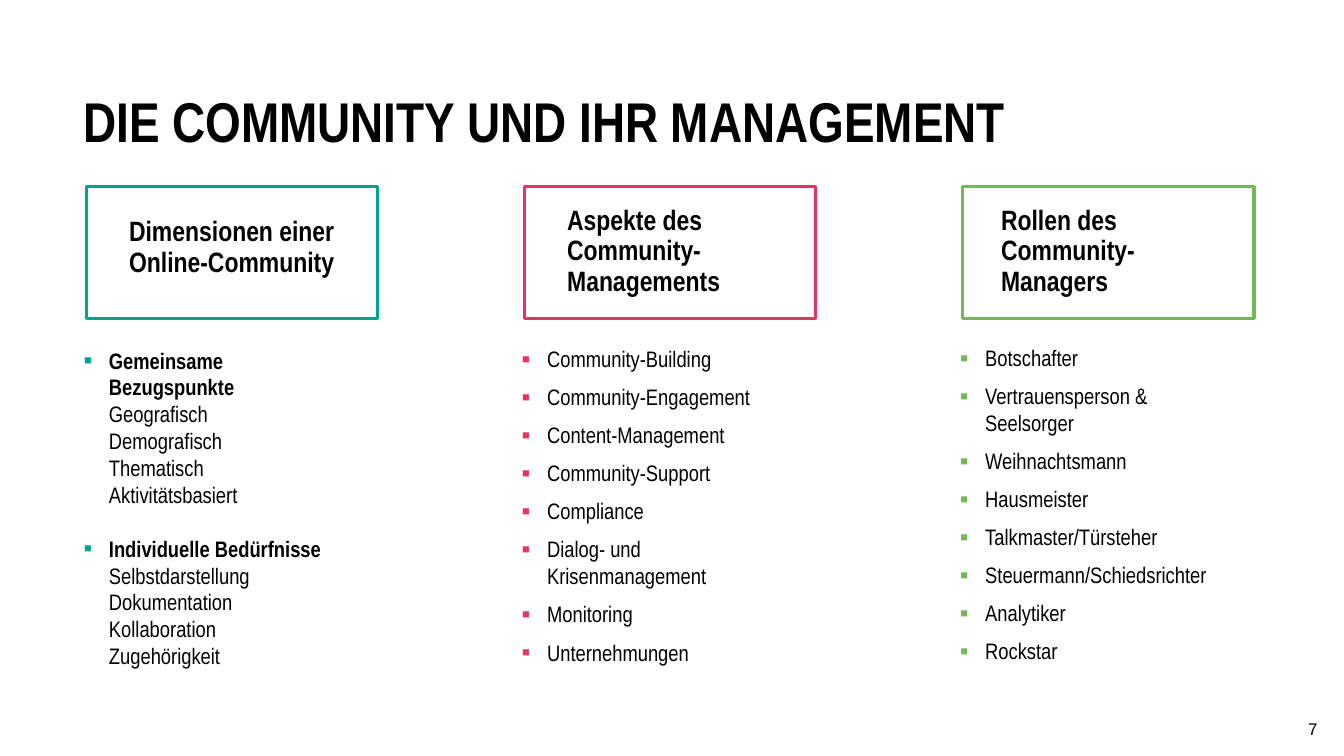
from dataclasses import dataclass

from lxml import etree
from pptx import Presentation
from pptx.dml.color import RGBColor
from pptx.enum import shapes, text
from pptx.oxml.ns import qn
from pptx.slide import Slide
from pptx.text.text import TextFrame, _Paragraph
from pptx.util import Cm, Pt


@dataclass(frozen=True)
class Theme:
    ink: str = "000000"
    teal: str = "00A48F"
    pink: str = "E63264"
    green: str = "73B95A"
    font: str = "Arial Narrow"
    number_font: str = "Arial"
    title_size: float = 30
    heading_size: float = 15
    list_size: float = 12
    number_size: float = 9
    frame_line: float = 1.75


@dataclass(frozen=True)
class Box:
    left: float
    top: float
    width: float
    height: float


@dataclass(frozen=True)
class Entry:
    lead: str
    details: tuple[str, ...] = ()


@dataclass(frozen=True)
class Column:
    heading: str
    color: str
    heading_box: Box
    list_top: float
    list_height: float
    gap_after: float
    entries: tuple[Entry, ...]


THEME = Theme()
COLUMN_PITCH = 8.28
FRAME = Box(1.63, 3.53, 5.51, 2.49)
LIST_LEFT, LIST_WIDTH = 1.3, 5.44
INDENT, HANGING = 0.51, -0.48

COLUMNS = (
    Column("Dimensionen einer Online-Community", THEME.teal,
           Box(1.68, 3.99, 5.44, 1.52), 6.43, 7.21, 14.4, (
               Entry("Gemeinsame Bezugspunkte",
                     ("Geografisch", "Demografisch", "Thematisch", "Aktivitätsbasiert")),
               Entry("Individuelle Bedürfnisse",
                     ("Selbstdarstellung", "Dokumentation", "Kollaboration", "Zugehörigkeit")),
           )),
    Column("Aspekte des Community-Managements", THEME.pink,
           Box(9.96, 3.78, 5.44, 1.93), 6.4, 6.22, 6, tuple(map(Entry, (
               "Community-Building", "Community-Engagement", "Content-Management",
               "Community-Support", "Compliance", "Dialog- und Krisenmanagement",
               "Monitoring", "Unternehmungen")))),
    Column("Rollen des Community-Managers", THEME.green,
           Box(18.16, 3.78, 5.56, 2.08), 6.38, 6.22, 6, tuple(map(Entry, (
               "Botschafter", "Vertrauensperson & Seelsorger", "Weihnachtsmann",
               "Hausmeister", "Talkmaster/Türsteher", "Steuermann/Schiedsrichter",
               "Analytiker", "Rockstar")))),
)


def in_cm(box: Box) -> tuple[Cm, Cm, Cm, Cm]:
    return Cm(box.left), Cm(box.top), Cm(box.width), Cm(box.height)


def style(paragraph: _Paragraph, size: float, bold: bool | None = False,
          font: str = THEME.font) -> None:
    paragraph.font.name = font
    paragraph.font.size = Pt(size)
    paragraph.font.bold = bold
    paragraph.font.color.rgb = RGBColor.from_string(THEME.ink)


def indent(paragraph: _Paragraph, first_line: float = 0) -> None:
    properties = paragraph._p.get_or_add_pPr()
    properties.set("marL", str(Cm(INDENT)))
    properties.set("indent", str(Cm(first_line)))


def add_bullet(paragraph: _Paragraph, color: str) -> None:
    properties = paragraph._p.get_or_add_pPr()
    bullet_color = etree.SubElement(properties, qn("a:buClr"))
    etree.SubElement(bullet_color, qn("a:srgbClr"), val=color)
    etree.SubElement(properties, qn("a:buSzPct"), val="110000")
    etree.SubElement(properties, qn("a:buFont"), typeface=THEME.number_font)
    etree.SubElement(properties, qn("a:buChar"), char="▪")


def add_text_frame(slide: Slide, box: Box) -> TextFrame:
    frame = slide.shapes.add_textbox(*in_cm(box)).text_frame
    frame.word_wrap = True
    return frame


def set_title(slide: Slide, wording: str) -> None:
    title = slide.shapes.title
    title.left, title.top, title.width, title.height = in_cm(Box(1.32, 1.42, 19.96, 1.5))
    title.text_frame.text = wording
    title.text_frame.auto_size = text.MSO_AUTO_SIZE.NONE
    title.text_frame.vertical_anchor = text.MSO_ANCHOR.TOP
    line = title.text_frame.paragraphs[0]
    line.alignment = text.PP_ALIGN.LEFT
    line.line_spacing = Pt(38.4)
    style(line, THEME.title_size, bold=True)


def add_heading(slide: Slide, column: Column, offset: float) -> None:
    outline = slide.shapes.add_shape(
        shapes.MSO_SHAPE.RECTANGLE,
        *in_cm(Box(FRAME.left + offset, FRAME.top, FRAME.width, FRAME.height)))
    outline.shadow.inherit = False
    outline.fill.background()
    outline.line.color.rgb = RGBColor.from_string(column.color)
    outline.line.width = Pt(THEME.frame_line)

    heading = add_text_frame(slide, column.heading_box).paragraphs[0]
    heading.text = column.heading
    heading.line_spacing = 0.9
    indent(heading)
    style(heading, THEME.heading_size, bold=True)


def add_list(slide: Slide, column: Column, offset: float) -> None:
    """Write the bulleted entries; an entry with details gets a bold lead line."""
    frame = add_text_frame(
        slide, Box(LIST_LEFT + offset, column.list_top, LIST_WIDTH, column.list_height))
    for position, entry in enumerate(column.entries):
        item = frame.add_paragraph() if position else frame.paragraphs[0]
        item.space_after = Pt(column.gap_after)
        indent(item, HANGING)
        add_bullet(item, column.color)
        style(item, THEME.list_size)
        lead = item.add_run()
        lead.text = entry.lead
        if entry.details:
            lead.font.bold = True
        for detail in entry.details:
            item.add_line_break()
            item.add_run().text = detail


def add_page_number(slide: Slide, number: str) -> None:
    frame = add_text_frame(slide, Box(23.65, 13.39, 1.5, 0.76))
    frame.vertical_anchor = text.MSO_ANCHOR.MIDDLE
    page = frame.paragraphs[0]
    page.text = number
    page.alignment = text.PP_ALIGN.RIGHT
    style(page, THEME.number_size, font=THEME.number_font)


def main() -> None:
    presentation = Presentation()
    presentation.slide_width, presentation.slide_height = Cm(25.4), Cm(14.29)
    slide = presentation.slides.add_slide(presentation.slide_layouts[5])
    set_title(slide, "DIE COMMUNITY UND IHR MANAGEMENT")
    for position, column in enumerate(COLUMNS):
        offset = position * COLUMN_PITCH
        add_heading(slide, column, offset)
        add_list(slide, column, offset)
    add_page_number(slide, "7")
    presentation.save("out.pptx")


if __name__ == "__main__":
    main()
